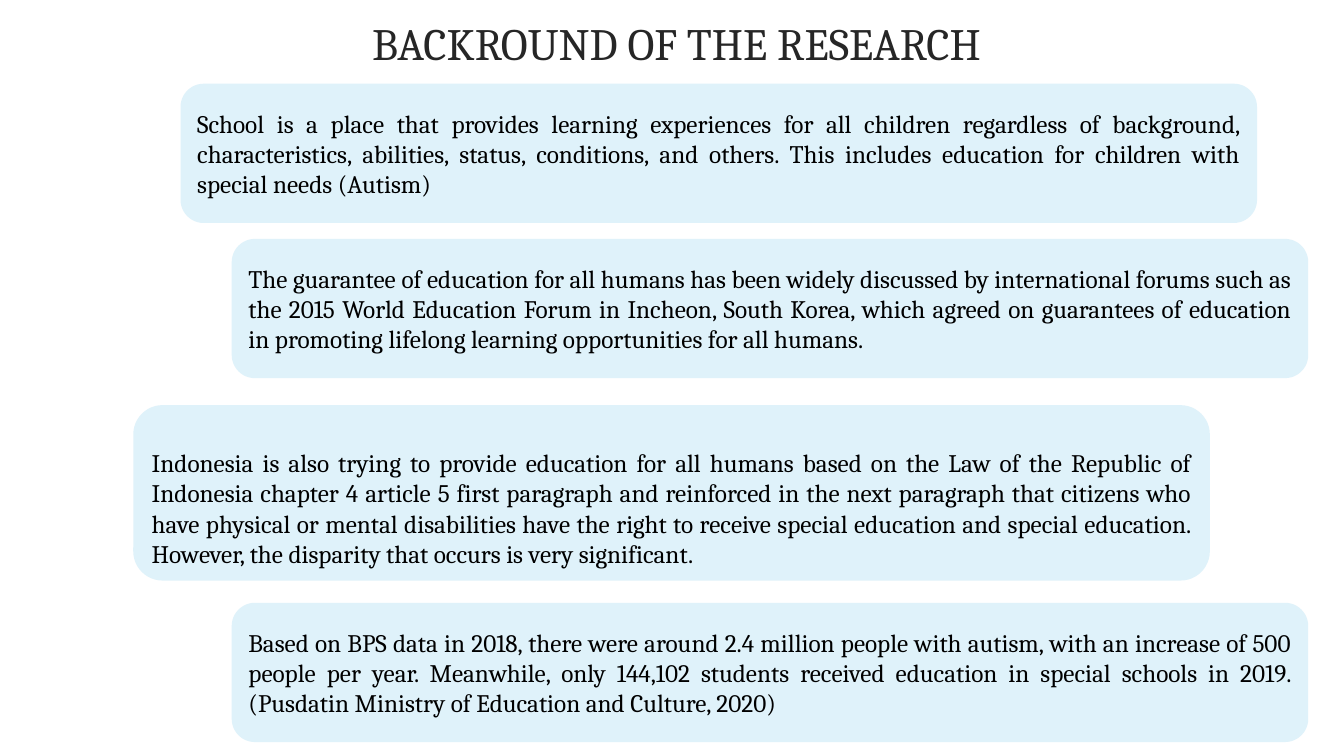
from pptx import Presentation
from pptx.dml.color import RGBColor
from pptx.enum import shapes, text
from pptx.util import Cm, Pt

FONT = "Cambria"
PALE_BLUE = RGBColor(0xDF, 0xF2, 0xFA)
CHARCOAL = RGBColor(0x26, 0x26, 0x26)
BLACK = RGBColor(0, 0, 0)

CARD_WIDTH = 27.13
CARD_HEIGHT = 3.51
INSET = 0.13

# Left, top, height, top inset (cm) and wording of each card
CARDS = [
    (4.55, 2.11, CARD_HEIGHT, INSET,
     "School is a place that provides learning experiences for all children "
     "regardless of background, characteristics, abilities, status, conditions, "
     "and others. This includes education for children with special needs (Autism)"),
    (5.84, 6.02, CARD_HEIGHT, INSET,
     "The guarantee of education for all humans has been widely discussed by "
     "international forums such as the 2015 World Education Forum in Incheon, "
     "South Korea, which agreed on guarantees of education in promoting lifelong "
     "learning opportunities for all humans."),
    (3.36, 10.21, 4.42, INSET + 0.76,
     "Indonesia is also trying to provide education for all humans based on the "
     "Law of the Republic of Indonesia chapter 4 article 5 first paragraph and "
     "reinforced in the next paragraph that citizens who have physical or mental "
     "disabilities have the right to receive special education and special "
     "education. However, the disparity that occurs is very significant."),
    (5.84, 15.19, CARD_HEIGHT, INSET,
     "Based on BPS data in 2018, there were around 2.4 million people with autism, "
     "with an increase of 500 people per year. Meanwhile, only 144,102 students "
     "received education in special schools in 2019. (Pusdatin Ministry of "
     "Education and Culture, 2020)"),
]


def write(shape, wording, size, color, alignment, top_inset=INSET):
    """Set one paragraph, centred vertically in the shape."""
    frame = shape.text_frame
    frame.word_wrap = True
    frame.vertical_anchor = text.MSO_ANCHOR.MIDDLE
    frame.margin_top, frame.margin_bottom = Cm(top_inset), Cm(INSET)
    para = frame.paragraphs[0]
    para.alignment = alignment
    span = para.add_run()
    span.text = wording
    span.font.name = FONT
    span.font.size = Pt(size)
    span.font.color.rgb = color
    return para


def add_title(page, left, top, width, height):
    box = page.shapes.add_textbox(Cm(left), Cm(top), Cm(width), Cm(height))
    para = write(box, "BACKROUND OF THE RESEARCH", 32, CHARCOAL,
                 text.PP_ALIGN.CENTER)
    para.line_spacing = 0.9
    para.space_before = Pt(10)


def add_card(page, left, top, height, top_inset, wording):
    card = page.shapes.add_shape(shapes.MSO_SHAPE.ROUNDED_RECTANGLE, Cm(left),
                                 Cm(top), Cm(CARD_WIDTH), Cm(height))
    card.shadow.inherit = False
    card.fill.solid()
    card.fill.fore_color.rgb = PALE_BLUE
    card.line.fill.background()
    write(card, wording, 18, BLACK, text.PP_ALIGN.JUSTIFY, top_inset)


def main():
    deck = Presentation()
    deck.slide_width, deck.slide_height = Cm(33.87), Cm(19.05)
    page = deck.slides.add_slide(deck.slide_layouts[6])

    # Heading
    add_title(page, 6.55, 0.2, 21.01, 1.91)

    # Staggered cards
    for card in CARDS:
        add_card(page, *card)

    deck.save("out.pptx")


if __name__ == "__main__":
    main()
